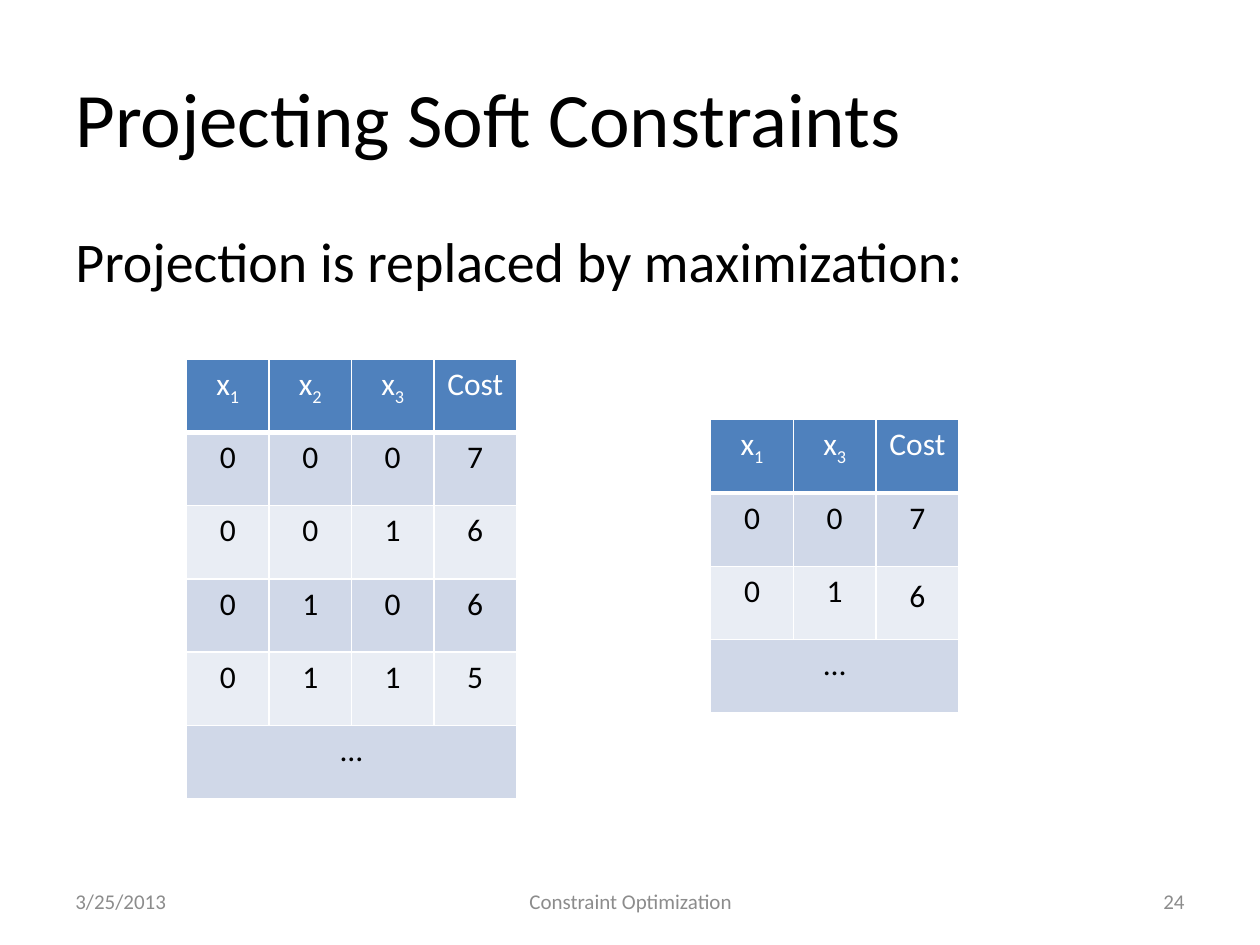
from lxml import etree
from pptx import Presentation
from pptx import util as u
from pptx.dml.color import RGBColor
from pptx.enum import text
from pptx.oxml import ns

COLORS = {"ink": "000000", "muted": "8C8C8C", "white": "FFFFFF",
          "header": "4F81BD", "odd": "D0D8E8", "even": "E9EDF4"}
LEFT, CENTER, RIGHT = (text.PP_ALIGN.LEFT, text.PP_ALIGN.CENTER,
                       text.PP_ALIGN.RIGHT)
TOP, MIDDLE = text.MSO_ANCHOR.TOP, text.MSO_ANCHOR.MIDDLE
FULL_COSTS = [["x1", "x2", "x3", "Cost"],
              ["0", "0", "0", "7"],
              ["0", "0", "1", "6"],
              ["0", "1", "0", "6"],
              ["0", "1", "1", "5"],
              ["…"]]
# The last cost of the projected table is a separate label on top of its cell.
PROJECTED_COSTS = [["x1", "x3", "Cost"],
                   ["0", "0", "7"],
                   ["0", "1", ""],
                   ["…"]]


def add_span(para, words, size, color, subscript=False):
    span = para.add_run()
    span.text = words
    formats = {"name": "Calibri", "size": u.Pt(size), "bold": False}
    for name, value in formats.items():
        setattr(span.font, name, value)
    span.font.color.rgb = RGBColor.from_string(COLORS[color])
    if subscript:
        span.font._element.set("baseline", "-25000")


def add_text(page, area, words, size, color="ink", align=LEFT, anchor=TOP,
             wrap=True):
    """Add a one-paragraph text box and return its paragraph."""
    box = page.shapes.add_textbox(*map(u.Inches, area))
    formats = {"word_wrap": wrap, "vertical_anchor": anchor,
               "auto_size": text.MSO_AUTO_SIZE.NONE if wrap
               else text.MSO_AUTO_SIZE.SHAPE_TO_FIT_TEXT}
    for name, value in formats.items():
        setattr(box.text_frame, name, value)
    para = box.text_frame.paragraphs[0]
    para.alignment = align
    add_span(para, words, size, color)
    return para


def add_heading(page, left, top, width):
    add_text(page, (left, top, width, 1.25), "Projecting Soft Constraints", 44,
             anchor=MIDDLE)


def add_statement(page, left, top, width):
    para = add_text(page, (left, top, width, 4.95),
                    "Projection is replaced by maximization:", 32)
    para.space_before = u.Pt(6.4)
    indent = u.Inches(0.38)
    properties = para._p.get_or_add_pPr()
    properties.set("marL", str(indent))
    properties.set("indent", str(-indent))


def add_footer(page, left, top, width):
    parts = [("3/25/2013", 0, 2.33, LEFT),
             ("Constraint Optimization", 2.92, 3.17, CENTER),
             ("24", width - 2.33, 2.33, RIGHT)]
    for words, offset, part_width, align in parts:
        add_text(page, (left + offset, top, part_width, 0.4), words, 12,
                 "muted", align, MIDDLE)


def set_borders(cell, bottom):
    properties = cell._tc.get_or_add_tcPr()
    for side, points in {"L": 1, "R": 1, "T": 1, "B": bottom}.items():
        line = etree.SubElement(properties, ns.qn(f"a:ln{side}"),
                                w=str(u.Pt(points)))
        fill = etree.SubElement(line, ns.qn("a:solidFill"))
        etree.SubElement(fill, ns.qn("a:srgbClr"), val=COLORS["white"])


def fill_cell(cell, words, fill, is_header):
    set_borders(cell, bottom=3 if is_header else 1)
    cell.fill.solid()
    cell.fill.fore_color.rgb = RGBColor.from_string(COLORS[fill])
    para = cell.text_frame.paragraphs[0]
    para.alignment = CENTER
    color = "white" if is_header else "ink"
    if words.startswith("x"):
        add_span(para, words[0], 18, color)
        add_span(para, words[1:], 18, color, subscript=True)
    elif words:
        add_span(para, words, 18, color)


def add_cost_table(page, area, rows):
    """Add a banded table; a row with a single entry spans all columns."""
    columns = len(rows[0])
    left, top, width, height = map(u.Inches, area)
    table = page.shapes.add_table(len(rows), columns, left, top, width,
                                  height).table
    for column in table.columns:
        column.width = width // columns
    for index, row in enumerate(rows):
        table.rows[index].height = height // len(rows)
        if len(row) == 1:
            table.cell(index, 0).merge(table.cell(index, columns - 1))
        fill = "header" if index == 0 else "odd" if index % 2 else "even"
        for column in range(columns):
            words = row[column] if column < len(row) else ""
            fill_cell(table.cell(index, column), words, fill, index == 0)


def add_projected_costs(page, left, top):
    add_cost_table(page, (left, top, 1.97, 2.33), PROJECTED_COSTS)
    add_text(page, (left + 1.48, top + 1.19, 0.33, 0.4), "6", 18, wrap=False)


def build_projection_slide(page):
    add_heading(page, 0.5, 0.3, 9)
    add_statement(page, 0.5, 1.75, 9)
    add_footer(page, 0.5, 6.95, 9)
    add_cost_table(page, (1.48, 2.85, 2.62, 3.49), FULL_COSTS)
    add_projected_costs(page, 5.64, 3.33)


def main():
    deck = Presentation()
    deck.slide_width, deck.slide_height = u.Inches(10), u.Inches(7.5)
    build_projection_slide(deck.slides.add_slide(deck.slide_layouts[6]))
    deck.save("out.pptx")


if __name__ == "__main__":
    main()
